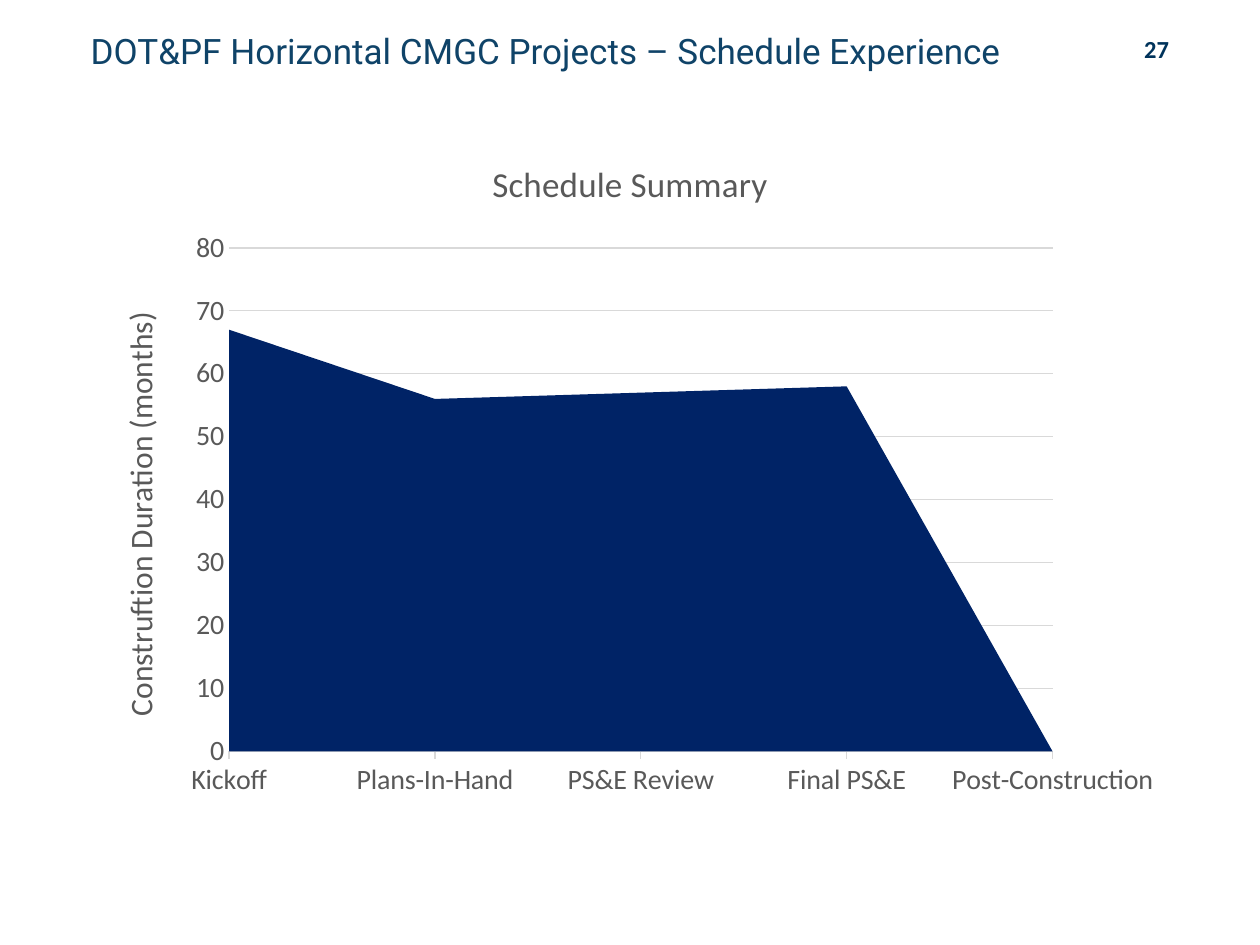
from lxml import etree
from pptx import Presentation
from pptx.chart.data import CategoryChartData
from pptx.dml.color import RGBColor
from pptx.enum.chart import XL_CHART_TYPE as ChartType, XL_TICK_MARK as TickMark
from pptx.enum.text import MSO_ANCHOR as Anchor, PP_ALIGN as Align
from pptx.oxml.ns import qn
from pptx.util import Inches, Pt


def color(value):
    return RGBColor.from_string(value)


def add_run(paragraph, text, size, font_name, font_color, bold=False):
    run = paragraph.add_run()
    run.text = text
    run.font.size = Pt(size)
    run.font.name = font_name
    run.font.bold = bold
    run.font.color.rgb = color(font_color)


GRAY, LIGHT_GRAY, NAVY = "595959", "D9D9D9", "002366"

presentation = Presentation()
presentation.slide_width = Inches(10)
presentation.slide_height = Inches(7.5)
slide = presentation.slides.add_slide(presentation.slide_layouts[5])

title = slide.shapes.title
title.left, title.top = Inches(0.62), Inches(0.23)
title.width, title.height = Inches(8.26), Inches(0.39)
title.text_frame.vertical_anchor = Anchor.MIDDLE
title.text_frame.word_wrap = True
title_paragraph = title.text_frame.paragraphs[0]
title_paragraph.alignment = Align.LEFT
title_paragraph.line_spacing = 0.9
add_run(title_paragraph, "DOT&PF Horizontal CMGC Projects – Schedule Experience",
        20, "Roboto", "0F4368")

page_number = slide.shapes.add_textbox(Inches(8.96), Inches(0.22), Inches(0.44), Inches(0.34))
page_number.text_frame.word_wrap = True
number_paragraph = page_number.text_frame.paragraphs[0]
number_paragraph.alignment = Align.CENTER
add_run(number_paragraph, "27", 14, "Calibri", "00335B", bold=True)

chart_data = CategoryChartData(number_format="0")
chart_data.categories = ["Kickoff", "Plans-In-Hand", "PS&E Review", "Final PS&E",
                         "Post-Construction"]
chart_data.add_series("Series 1", [67, 56, 57, 58, None])
chart = slide.shapes.add_chart(ChartType.AREA_STACKED, Inches(0.7), Inches(1.05),
                               Inches(8.6), Inches(5.4), chart_data).chart
chart.has_legend = False
chart.font.name = "Calibri"
chart.font.size = Pt(10)
chart.plots[0].vary_by_categories = False
series_fill = chart.plots[0].series[0].format.fill
series_fill.solid()
series_fill.fore_color.rgb = color(NAVY)

category_axis, value_axis = chart.category_axis, chart.value_axis
for titled, text, size in [(chart, "Schedule Summary", 20),
                           (value_axis, "Construftion Duration (months)", 18)]:
    titled.has_title = True
    heading = titled.chart_title if titled is chart else titled.axis_title
    add_run(heading.text_frame.paragraphs[0], text, size, "Calibri", GRAY)

for axis in (category_axis, value_axis):
    axis.tick_labels.font.size = Pt(16)
    axis.tick_labels.font.name = "Calibri"
    axis.tick_labels.font.color.rgb = color(GRAY)
    axis.minor_tick_mark = TickMark.NONE

category_axis.major_tick_mark = TickMark.OUTSIDE
category_axis.has_major_gridlines = False
value_axis.major_tick_mark = TickMark.NONE
value_axis.has_major_gridlines = True
value_axis.minimum_scale = 0
value_axis.maximum_scale = 80
value_axis.major_unit = 10
value_axis.tick_labels.number_format = "0"
value_axis.tick_labels.number_format_is_linked = False
value_axis.format.line.fill.background()
for line in (category_axis.format.line, value_axis.major_gridlines.format.line):
    line.color.rgb = color(LIGHT_GRAY)
    line.width = Pt(0.75)

plot_area = chart.element.find(".//" + qn("c:plotArea"))
plot_area.find(".//" + qn("c:crossBetween")).set("val", "midCat")
for old_layout in plot_area.findall(qn("c:layout")):
    plot_area.remove(old_layout)
layout = etree.Element(qn("c:layout"))
manual_layout = etree.SubElement(layout, qn("c:manualLayout"))
for tag, value in [("layoutTarget", "inner"), ("xMode", "edge"), ("yMode", "edge"),
                   ("x", "0.13"), ("y", "0.17"), ("w", "0.76"), ("h", "0.74")]:
    etree.SubElement(manual_layout, qn("c:" + tag)).set("val", value)
plot_area.insert(0, layout)

presentation.save("out.pptx")
